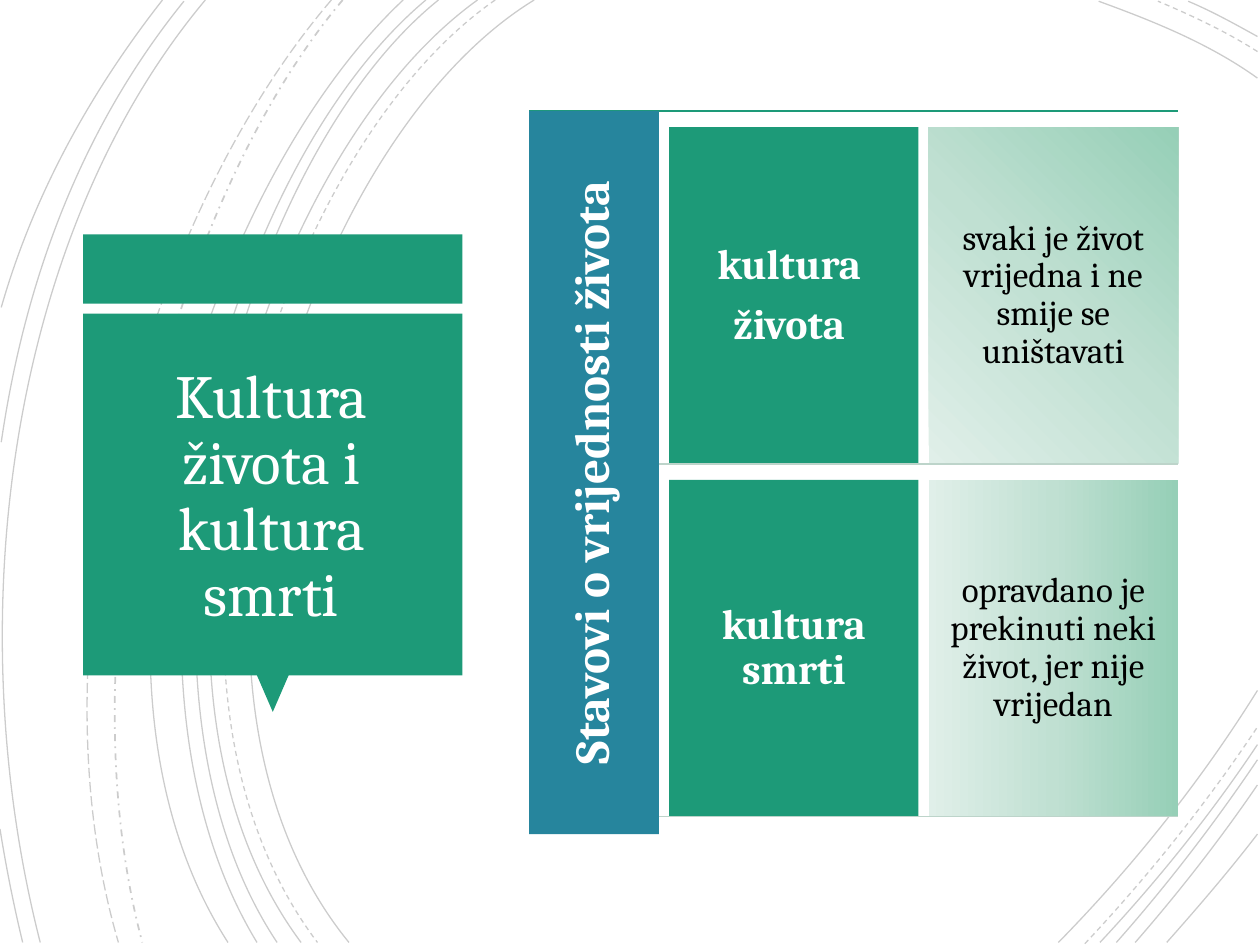
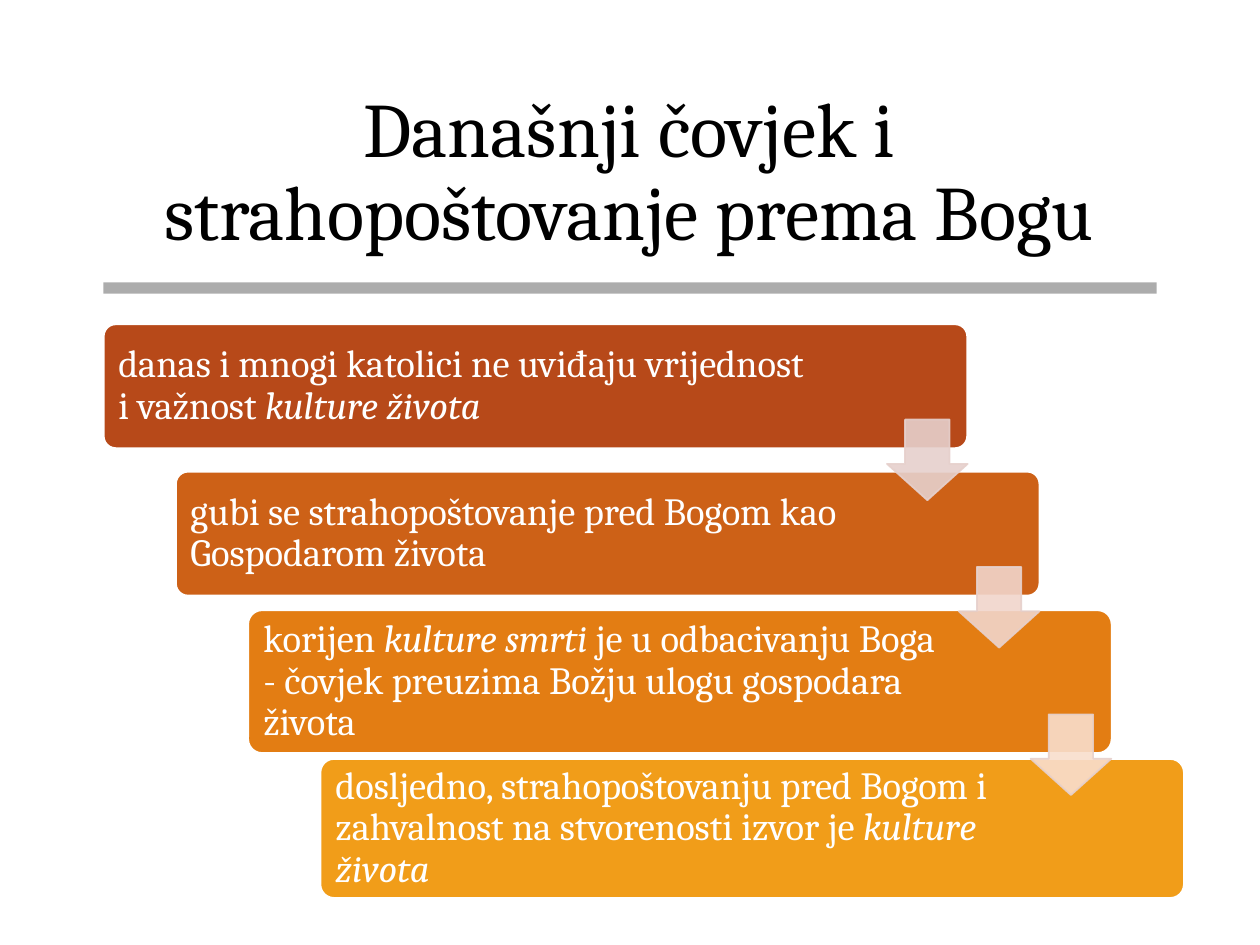
from lxml import etree
from pptx import Presentation
from pptx.dml.color import RGBColor
from pptx.enum.dml import MSO_LINE
from pptx.enum.shapes import MSO_CONNECTOR, MSO_SHAPE
from pptx.enum.text import MSO_ANCHOR, MSO_AUTO_SIZE, PP_ALIGN
from pptx.oxml import parse_xml
from pptx.oxml.ns import nsdecls, qn
from pptx.util import Inches, Pt

RECT, ROUNDED = MSO_SHAPE.RECTANGLE, MSO_SHAPE.ROUNDED_RECTANGLE
TRIANGLE, DOWN_ARROW = MSO_SHAPE.ISOSCELES_TRIANGLE, MSO_SHAPE.DOWN_ARROW
STRAIGHT = MSO_CONNECTOR.STRAIGHT
SOLID, DASH = MSO_LINE.SOLID, MSO_LINE.DASH
DASH_DOT, LONG_DASH = MSO_LINE.DASH_DOT, MSO_LINE.LONG_DASH
MIDDLE, NO_FIT = MSO_ANCHOR.MIDDLE, MSO_AUTO_SIZE.NONE
LEFT, CENTER = PP_ALIGN.LEFT, PP_ALIGN.CENTER

FONT = "Cambria"
COLORS = {
    "white": "FFFFFF", "black": "000000", "green": "1D9A78", "blue": "26859D",
    "divider": "BDD4CA", "rule": "808080", "arrow_edge": "E6D0CC",
}
MINT_STOPS = {0: "96CFB7", 50: "C0E0D2", 100: "E0EFE9"}
CORNER_GLOW = ('<a:path path="circle"><a:fillToRect l="100000" t="0" r="0" '
               'b="100000"/></a:path>')
SIDE_GLOW = '<a:lin ang="10800000" scaled="0"/>'

ARCS = [
    ((4.24, 0, 2.36, 1.15, 1.07, 5.4, 2.77, 7.48), SOLID),
    ((9.98, 0.62, 9.59, 0.34, 9.13, 0.16, 8.72, 0.01), SOLID),
    ((8.4, 7.48, 8.97, 6.9, 9.52, 6.22, 9.98, 5.48), SOLID),
    ((3.93, 0, 2.13, 1.25, 0.92, 5.37, 2.52, 7.48), DASH),
    ((9.98, 0.41, 9.73, 0.25, 9.45, 0.12, 9.19, 0.01), DASH),
    ((8.61, 7.49, 9.09, 6.98, 9.56, 6.4, 9.98, 5.77), DASH),
    ((3.79, 0, 2.02, 1.27, 0.82, 5.37, 2.39, 7.48), SOLID),
    ((9.98, 0.29, 9.8, 0.19, 9.62, 0.09, 9.43, 0.01), SOLID),
    ((8.73, 7.48, 9.17, 7.01, 9.6, 6.48, 9.98, 5.91), SOLID),
    ((3.48, 0, 1.83, 1.33, 0.82, 5.41, 2.2, 7.48), SOLID),
    ((8.86, 7.48, 9.25, 7.04, 9.63, 6.55, 9.98, 6.03), SOLID),
    ((3.38, 0, 1.73, 1.38, 0.73, 5.33, 2.04, 7.48), SOLID),
    ((9.01, 7.48, 9.35, 7.09, 9.68, 6.67, 9.98, 6.23), SOLID),
    ((3.2, 0, 1.63, 1.47, 0.4, 5.29, 1.81, 7.48), SOLID),
    ((9.26, 7.48, 9.5, 7.21, 9.75, 6.92, 9.98, 6.62), SOLID),
    ((2.72, 0, 1.32, 1.66, 0.49, 5.09, 1.13, 7.48), DASH_DOT),
    ((2.63, 0, 1.18, 1.69, 0.21, 4.99, 0.94, 7.48), LONG_DASH),
    ((1.63, 0, 0.08, 1.85, -0.34, 4.9, 0.32, 7.48), SOLID),
    ((1.46, 0.01, 0.69, 0.96, 0.21, 2.14, 0.01, 3.51), SOLID),
    ((0, 6.58, 0.05, 6.89, 0.11, 7.19, 0.18, 7.48), SOLID),
    ((1.29, 0, 0.75, 0.69, 0.28, 1.5, 0.01, 2.44), SOLID),
]

ATTITUDES = [
    (["kultura ", "života "],
     "svaki je život vrijedna i ne smije se uništavati", CORNER_GLOW),
    (["kultura smrti"],
     "opravdano je prekinuti neki život, jer nije vrijedan", SIDE_GLOW),
]

STEPS = [
    (0, 0.99, 1.18, "B74919",
     [("danas i mnogi katolici ne uviđaju vrijednost i važnost ", False),
      ("kulture života", True)]),
    (1.17, 0.99, 1.31, "CD6117",
     [("gubi se strahopoštovanje pred Bogom kao Gospodarom života", False)]),
    (2.27, 1.14, 1.31, "E37D13",
     [("korijen ", False), ("kulture smrti ", True),
      ("je u odbacivanju Boga - čovjek preuzima Božju ulogu gospodara života",
       False)]),
    (3.45, 1.11, 1.31, "F19D19",
     [("dosljedno, strahopoštovanju pred Bogom i zahvalnost na stvorenosti "
       "izvor je ", False), ("kulture života", True)]),
]
ARROW_FILLS = ["E6D0CC", "F1D5CB", "F9DECD"]


def apply_format(target, **values):
    """Set every named attribute of the target."""
    for name, value in values.items():
        setattr(target, name, value)


def rgb(color):
    """Look up a named colour, or take the hex string itself."""
    return RGBColor.from_string(COLORS.get(color, color))


def fade(shape, percent):
    """Make the solid colours of a shape partly opaque."""
    for color in shape.element.iter(qn("a:srgbClr")):
        etree.SubElement(color, qn("a:alpha"), val=str(percent * 1000))


def add_block(slide, kind, box, fill, edge=None, edge_width=1):
    """Add a flat preset shape with an optional edge."""
    block = slide.shapes.add_shape(kind, *map(Inches, box))
    block.shadow.inherit = False
    block.fill.solid()
    block.fill.fore_color.rgb = rgb(fill)
    if edge:
        block.line.color.rgb = rgb(edge)
        block.line.width = Pt(edge_width)
    else:
        block.line.fill.background()
    return block


def fill_mint(block, direction):
    """Replace the fill of a block with the mint gradient."""
    stops = "".join(f'<a:gs pos="{at * 1000}"><a:srgbClr val="{color}"/></a:gs>'
                    for at, color in MINT_STOPS.items())
    gradient = parse_xml(f'<a:gradFill {nsdecls("a")} rotWithShape="1">'
                         f'<a:gsLst>{stops}</a:gsLst>{direction}</a:gradFill>')
    solid = block.element.spPr.find(qn("a:solidFill"))
    solid.getparent().replace(solid, gradient)


def write(shape, paragraphs, size, color="white", bold=False, align=CENTER,
          inset=0.1, right=None):
    """Write paragraphs of (words, italic) runs into a shape."""
    frame = shape.text_frame
    side = Inches(inset)
    apply_format(frame, word_wrap=True, auto_size=NO_FIT, vertical_anchor=MIDDLE,
                 margin_left=side, margin_top=side, margin_bottom=side,
                 margin_right=Inches(right or inset))
    for index, runs in enumerate(paragraphs):
        paragraph = frame.add_paragraph() if index else frame.paragraphs[0]
        apply_format(paragraph, alignment=align, line_spacing=0.9,
                     space_before=Pt(0), space_after=Pt(0.35 * size))
        for words, italic in runs:
            run = paragraph.add_run()
            run.text = words
            apply_format(run.font, name=FONT, size=Pt(size), bold=bold,
                         italic=italic)
            run.font.color.rgb = rgb(color)


def place_title(slide, box, words, size, color):
    """Move the title to its box, in front of the other parts."""
    title = slide.shapes.title
    for name, value in zip(("left", "top", "width", "height"), box):
        setattr(title, name, Inches(value))
    write(title, [[(words, False)]], size, color)
    title.text_frame.paragraphs[0].space_after = Pt(0)
    title.element.getparent().append(title.element)


def add_divider(slide, left, right, y, color):
    """Draw a thin horizontal line."""
    divider = slide.shapes.add_connector(
        STRAIGHT, *map(Inches, (left, y, right, y)))
    divider.line.color.rgb = rgb(color)
    divider.line.width = Pt(1)
    etree.SubElement(divider.element.spPr, qn("a:effectLst"))


def add_curve(slide, curve):
    """Add an open outline made of one cubic curve."""
    lengths = [Inches(value) for value in curve]
    start, *rest = zip(lengths[::2], lengths[1::2])
    builder = slide.shapes.build_freeform(*start)
    builder.add_line_segments(rest, close=False)
    outline = builder.convert_to_shape()
    segments = list(outline.element.iter(qn("a:lnTo")))
    bend = etree.SubElement(segments[0].getparent(), qn("a:cubicBezTo"))
    for segment in segments:
        bend.append(segment[0])
        segment.getparent().remove(segment)
    return outline


def draw_arcs(slide):
    """Draw the faint sweeping arcs behind the content."""
    for curve, dash in ARCS:
        arc = add_curve(slide, curve)
        arc.shadow.inherit = False
        arc.fill.background()
        arc.line.color.rgb = rgb("black")
        apply_format(arc.line, width=Pt(1 if dash == DASH_DOT else 0.75),
                     dash_style=dash)
        fade(arc, 20)


def draw_title_callout(slide, box, words):
    """Draw the green band and the pointed panel that holds the title."""
    left, top, width, height = box
    panel_top, tip_height = top + 0.63, 0.3
    panel_height = height - 0.63 - tip_height
    add_block(slide, RECT, (left, top, width, 0.55), "green")
    tip = add_block(slide, TRIANGLE, (left + width / 2 - 0.13,
                                      top + height - tip_height - 0.01,
                                      0.26, tip_height), "green")
    tip.rotation = 180
    add_block(slide, RECT, (left, panel_top, width, panel_height), "green")
    place_title(slide, (left + 0.08, panel_top + 0.15, width - 0.18,
                        panel_height - 0.25), words, 35, "white")


def draw_attitudes(slide, box):
    """Draw the vertical heading with one row for each attitude."""
    left, top, width, height = box
    band, gap, cell_width, cell_height = 1.03, 0.08, 1.98, 2.67
    right = left + width
    add_divider(slide, left, right, top, "green")
    heading = add_block(slide, RECT, (left, top, band, height), "blue")
    write(heading, [[("Stavovi o vrijednosti života", False)]], 28, bold=True,
          inset=0.12)
    heading.text_frame._txBody.bodyPr.set("vert", "vert270")
    name_left = left + band + gap
    view_left = name_left + cell_width + gap
    for row, (name, view, glow) in enumerate(ATTITUDES):
        y = top + 0.13 + row * (cell_height + 0.13)
        name_cell = add_block(slide, RECT,
                              (name_left, y, cell_width, cell_height), "green")
        write(name_cell, [[(words, False)] for words in name], 24, bold=True)
        view_cell = add_block(slide, RECT,
                              (view_left, y, cell_width, cell_height), "white")
        fill_mint(view_cell, glow)
        write(view_cell, [[(view, False)]], 20, "black", inset=0.08)
        add_divider(slide, left + band, right, y + cell_height, "divider")


def draw_staircase(slide, box):
    """Draw the descending steps and the arrows between them."""
    left, top, width, _ = box
    step_width, arrow_size = 6.86, 0.64
    shift = (width - step_width) / (len(STEPS) - 1)
    for index, (drop, height, right, fill, runs) in enumerate(STEPS):
        step = add_block(slide, ROUNDED, (left + index * shift, top + drop,
                                          step_width, height), fill, "white", 1.5)
        step.adjustments[0] = 0.1
        write(step, [runs], 22, align=LEFT, inset=0.09, right=right)
    for index, fill in enumerate(ARROW_FILLS):
        arrow = add_block(slide, DOWN_ARROW,
                          (left + step_width - arrow_size + index * 0.57,
                           top + 0.76 + index * 1.17, arrow_size, arrow_size),
                          fill, "arrow_edge")
        arrow.adjustments[0], arrow.adjustments[1] = 0.55, 0.45
        fade(arrow, 90)


def build_attitudes_slide(slide):
    """Build the slide about the two cultures."""
    draw_arcs(slide)
    draw_attitudes(slide, (4.2, 0.88, 5.15, 5.74))
    draw_title_callout(slide, (0.66, 1.86, 3.01, 3.8),
                       "Kultura života i kultura smrti")


def build_reverence_slide(slide):
    """Build the slide about reverence for God."""
    place_title(slide, (0.71, 0.66, 8.57, 1.45),
                "Današnji čovjek i strahopoštovanje prema Bogu", 44, "black")
    fade(add_block(slide, RECT, (0.82, 2.24, 8.36, 0.09), "rule"), 65)
    draw_staircase(slide, (0.82, 2.57, 8.58, 4.56))


def main():
    """Build and save the presentation."""
    deck = Presentation()
    deck.slide_width, deck.slide_height = Inches(10), Inches(7.5)
    title_only = deck.slide_layouts[5]
    for build in (build_attitudes_slide, build_reverence_slide):
        build(deck.slides.add_slide(title_only))
    deck.save("out.pptx")


if __name__ == "__main__":
    main()
